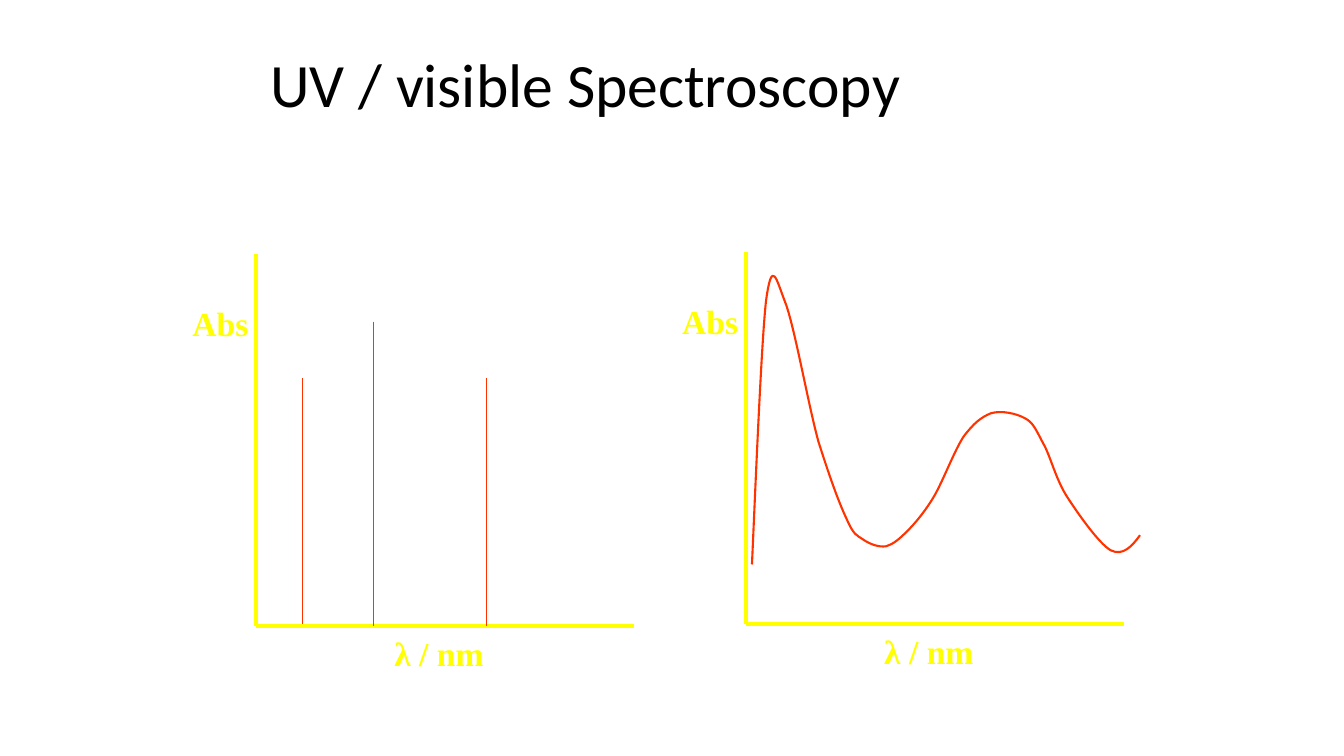
from typing import NamedTuple

from lxml.etree import SubElement
from pptx import Presentation
from pptx.dml.color import RGBColor
from pptx.enum.text import MSO_ANCHOR, MSO_AUTO_SIZE
from pptx.oxml.ns import qn
from pptx.util import Pt

BLACK = RGBColor(0x00, 0x00, 0x00)
YELLOW = RGBColor(0xFF, 0xFF, 0x00)
RED = RGBColor(0xFF, 0x33, 0x00)

AXIS_WIDTH, AXIS_HEIGHT = 270, 265.7


class Point(NamedTuple):
    x: float
    y: float


class Box(NamedTuple):
    left: float
    top: float
    width: float
    height: float


class SpectralLine(NamedTuple):
    x: float
    top: float
    bottom: float


LINE_PLOT_ORIGIN = Point(182.9, 447.1)
BAND_PLOT_ORIGIN = Point(532.8, 445.7)

SPECTRAL_LINES = [
    SpectralLine(216, 270, 445.7),
    SpectralLine(267.1, 229.7, 447.1),
    SpectralLine(347.8, 270, 447.1),
]

# Each row holds two control points and the end of one Bezier segment.
BAND_START = Point(537.1, 403.2)
BAND_SEGMENTS = [
    (Point(538.6, 372.2), Point(543.6, 245.5), Point(547.2, 214.6)),
    (Point(551.5, 183.6), Point(554.4, 199.4), Point(560.9, 216)),
    (Point(567.4, 232.6), Point(577.4, 289.4), Point(584.6, 315.4)),
    (Point(592.6, 340.6), Point(599, 358.6), Point(604.8, 370.8)),
    (Point(609.8, 382.3), Point(612, 382.3), Point(616.3, 385.2)),
    (Point(621.4, 388.8), Point(627.8, 391), Point(632.9, 390.2)),
    (Point(637.9, 388.8), Point(642.2, 385.2), Point(648, 379.4)),
    (Point(653.8, 373.7), Point(661, 365), Point(667.4, 354.2)),
    (Point(673.9, 342.7), Point(681.8, 321.8), Point(688.3, 311.8)),
    (Point(695.5, 302.4), Point(700.6, 298.1), Point(707.8, 295.2)),
    (Point(715, 293), Point(725.8, 295.2), Point(732.2, 298.8)),
    (Point(738, 301.7), Point(740.2, 307.4), Point(745.2, 316.8)),
    (Point(750.2, 325.4), Point(753.8, 341.3), Point(761.8, 354.2)),
    (Point(769.7, 366.5), Point(784.8, 388.1), Point(793.4, 393.1)),
    (Point(802.1, 397.4), Point(808.6, 390.2), Point(814.3, 382.3)),
]


def add_line(shapes, start: Point, end: Point, color: RGBColor, width: float) -> None:
    line = shapes.add_connector(1, Pt(start.x), Pt(start.y), Pt(end.x), Pt(end.y))
    line.line.color.rgb = color
    line.line.width = Pt(width)
    SubElement(line._element.spPr, qn("a:effectLst"))


def add_text(shapes, text: str, box: Box, *, font: str, size: float, color: RGBColor,
             bold: bool = False, wrap: bool = False, line_spacing: float = 1.0,
             anchor: MSO_ANCHOR = MSO_ANCHOR.TOP,
             auto_size: MSO_AUTO_SIZE = MSO_AUTO_SIZE.SHAPE_TO_FIT_TEXT) -> None:
    frame = shapes.add_textbox(*(Pt(length) for length in box)).text_frame
    frame.word_wrap = wrap
    frame.auto_size = auto_size
    frame.vertical_anchor = anchor
    para = frame.paragraphs[0]
    para.line_spacing = line_spacing
    span = para.add_run()
    span.text = text
    span.font.name = font
    span.font.size = Pt(size)
    span.font.bold = bold
    span.font.color.rgb = color


def add_axes(page, origin: Point) -> None:
    """Group the two axes of a plot with their labels."""
    shapes = page.shapes.add_group_shape().shapes
    for end in (Point(origin.x, origin.y - AXIS_HEIGHT),
                Point(origin.x + AXIS_WIDTH, origin.y)):
        add_line(shapes, origin, end, YELLOW, 3)
    labels = {
        " λ / nm": Box(origin.x + 85.7, origin.y + 1.2, 85.7, 36),
        "Abs": Box(origin.x - 52.6, origin.y - 234, 54.7, 36),
    }
    for text, box in labels.items():
        add_text(shapes, text, box, font="Times New Roman", size=24,
                 color=YELLOW, bold=True)


def add_band_curve(page) -> None:
    """Draw the absorption bands as one smooth open curve."""
    builder = page.shapes.build_freeform(Pt(BAND_START.x), Pt(BAND_START.y))
    builder.add_line_segments(
        [(Pt(point.x), Pt(point.y)) for segment in BAND_SEGMENTS for point in segment],
        close=False)
    curve = builder.convert_to_shape()
    curve.shadow.inherit = False
    curve.fill.background()
    curve.line.color.rgb = RED
    curve.line.width = Pt(1.5)

    # Turn every three straight steps into one cubic Bezier segment.
    outline = next(curve._element.iter(qn("a:path")))
    steps = outline.findall(qn("a:lnTo"))
    for first in range(0, len(steps), 3):
        bezier = SubElement(outline, qn("a:cubicBezTo"))
        for step in steps[first:first + 3]:
            bezier.append(step[0])
            outline.remove(step)


def main() -> None:
    deck = Presentation()
    deck.slide_width, deck.slide_height = Pt(960), Pt(540)
    page = deck.slides.add_slide(deck.slide_layouts[6])

    add_text(page.shapes, "UV / visible Spectroscopy", Box(185.8, 23.8, 588.2, 66.2),
             font="Calibri", size=44, color=BLACK, wrap=True, line_spacing=0.9,
             anchor=MSO_ANCHOR.BOTTOM, auto_size=MSO_AUTO_SIZE.NONE)

    add_axes(page, LINE_PLOT_ORIGIN)
    for line in SPECTRAL_LINES:
        add_line(page.shapes, Point(line.x, line.top), Point(line.x, line.bottom),
                 RED, 0.75)

    add_axes(page, BAND_PLOT_ORIGIN)
    add_band_curve(page)

    deck.save("out.pptx")


if __name__ == "__main__":
    main()
